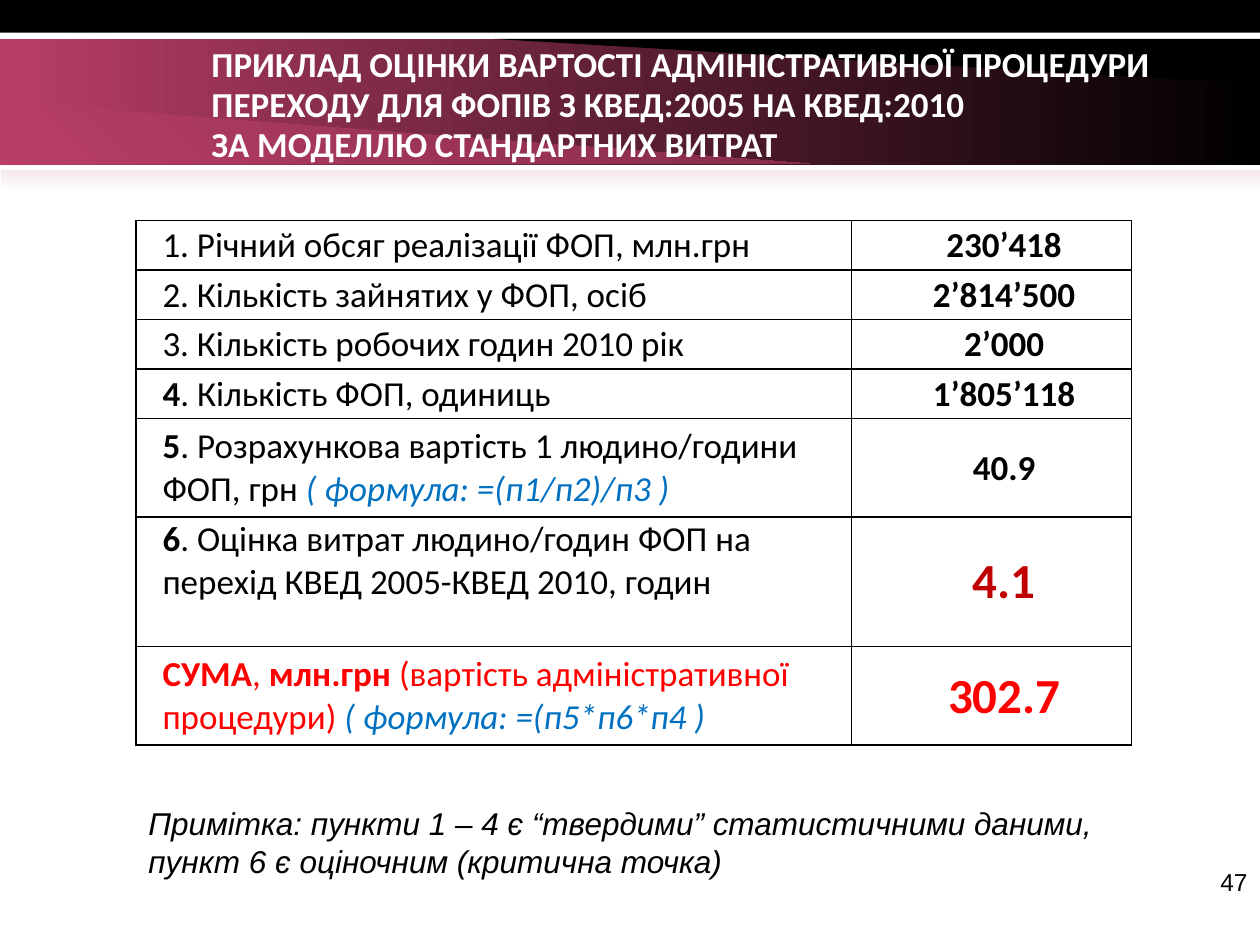
from dataclasses import dataclass

import pptx
import pptx.dml.color
import pptx.enum.shapes
import pptx.enum.text
import pptx.oxml
import pptx.oxml.ns
import pptx.util

COLS, ROWS = 100, 75
UNIT = pptx.util.Inches(0.1)
ALIGN = pptx.enum.text.PP_ALIGN
ANCHOR = pptx.enum.text.MSO_ANCHOR


@dataclass(frozen=True)
class Theme:
    heading_font: str = "Calibri"
    body_font: str = "Arial"
    black: str = "000000"
    white: str = "FFFFFF"
    rose: str = "B83D68"
    plum: str = "842C4A"
    blush: str = "F4E7ED"
    blue: str = "0070C0"
    dark_red: str = "C00000"
    red: str = "FF0000"
    text: int = 20
    value: int = 28
    note: int = 18
    number: int = 14
    title_spacing: int = 23


T = Theme()


@dataclass(frozen=True)
class Box:
    """A place on the grid, in columns and rows."""
    col: float
    row: float
    width: float
    height: float

    def emu(self) -> list[int]:
        return [grid(n) for n in (self.col, self.row, self.width, self.height)]


@dataclass(frozen=True)
class Run:
    text: str
    bold: bool = False
    italic: bool = False
    color: str = T.black


@dataclass(frozen=True)
class CostRow:
    label: list[Run]
    value: str
    height: float
    value_color: str = T.black
    value_size: int = T.text
    label_anchor: ANCHOR = ANCHOR.MIDDLE


def grid(n: float) -> int:
    return round(n * UNIT)


def rgb(color: str) -> pptx.dml.color.RGBColor:
    return pptx.dml.color.RGBColor.from_string(color)


def paint(sp, colors: list[str], angle: float = 0) -> None:
    """Fill with one colour, or with a gradient turned counter-clockwise."""
    sp.shadow.inherit = False
    sp.line.fill.background()
    if len(colors) == 1:
        sp.fill.solid()
        sp.fill.fore_color.rgb = rgb(colors[0])
        return
    sp.fill.gradient()
    sp.fill.gradient_angle = angle
    for stop, color in zip(sp.fill.gradient_stops, colors):
        stop.color.rgb = rgb(color)


def add_band(s, box: Box, colors: list[str], angle: float = 0) -> None:
    kind = pptx.enum.shapes.MSO_SHAPE.RECTANGLE
    paint(s.shapes.add_shape(kind, *box.emu()), colors, angle)


def add_facet(s, points: list[tuple[float, float]], colors: list[str], angle: float = 0) -> None:
    start, *rest = [(grid(x), grid(y)) for x, y in points]
    builder = s.shapes.build_freeform(*start)
    builder.add_line_segments(rest, close=True)
    paint(builder.convert_to_shape(), colors, angle)


def write(tf, paragraphs: list[list[Run]], *, font: str, size: int, align=ALIGN.LEFT,
          spacing: int | None = None, indent: float = 0) -> None:
    tf.word_wrap = True
    for i, runs in enumerate(paragraphs):
        p = tf.add_paragraph() if i else tf.paragraphs[0]
        p.alignment = align
        if spacing:
            p.line_spacing = pptx.util.Pt(spacing)
        if indent:
            p._p.get_or_add_pPr().set("marL", str(grid(indent)))
        for run in runs:
            r = p.add_run()
            r.text = run.text
            r.font.name, r.font.size = font, pptx.util.Pt(size)
            r.font.bold, r.font.italic = run.bold, run.italic
            r.font.color.rgb = rgb(run.color)


def add_text(s, box: Box, paragraphs: list[list[Run]], **fmt) -> None:
    write(s.shapes.add_textbox(*box.emu()).text_frame, paragraphs, **fmt)


def add_borders(cell) -> None:
    for side in "LRTB":
        cell._tc.get_or_add_tcPr().append(pptx.oxml.parse_xml(
            f'<a:ln{side} {pptx.oxml.ns.nsdecls("a")} w="12700"><a:solidFill>'
            f'<a:srgbClr val="{T.black}"/></a:solidFill></a:ln{side}>'))


def fill_cell(cell, runs: list[Run], anchor: ANCHOR, **fmt) -> None:
    add_borders(cell)
    cell.fill.background()
    cell.vertical_anchor = anchor
    cell.margin_left = cell.margin_right = cell.margin_top = grid(0.1)
    cell.margin_bottom = 0
    write(cell.text_frame, [runs], font=T.heading_font, indent=2, **fmt)


def add_cost_table(s, col: float, row: float, widths: list[float], rows: list[CostRow]) -> None:
    box = Box(col, row, sum(widths), sum(r.height for r in rows))
    table = s.shapes.add_table(len(rows), len(widths), *box.emu()).table
    table.first_row = table.horz_banding = False
    for column, width in zip(table.columns, widths):
        column.width = grid(width)
    for i, item in enumerate(rows):
        table.rows[i].height = grid(item.height)
        fill_cell(table.cell(i, 0), item.label, item.label_anchor, size=T.text)
        fill_cell(table.cell(i, 1), [Run(item.value, True, color=item.value_color)],
                  ANCHOR.MIDDLE, size=item.value_size, align=ALIGN.CENTER)


def formula(text: str) -> Run:
    return Run(text, italic=True, color=T.blue)


SINGLE, DOUBLE, TRIPLE = 3.93, 7.8, 10.3
COSTS = [
    CostRow([Run("1. Річний обсяг реалізації ФОП, млн.грн")], "230’418", SINGLE),
    CostRow([Run("2. Кількість зайнятих у ФОП, осіб")], "2’814’500", SINGLE),
    CostRow([Run("3. Кількість робочих годин 2010 рік")], "2’000", SINGLE),
    CostRow([Run("4", True), Run(". Кількість ФОП, одиниць")], "1’805’118", SINGLE),
    CostRow([Run("5", True), Run(". Розрахункова вартість 1 людино/години ФОП, грн "),
             formula("( формула: =(п1/п2)/п3 )")], "40.9", DOUBLE),
    CostRow([Run("6", True),
             Run(". Оцінка витрат людино/годин ФОП на перехід КВЕД 2005-КВЕД 2010, годин")],
            "4.1", TRIPLE, T.dark_red, T.value, ANCHOR.TOP),
    CostRow([Run("СУМА", True, color=T.red), Run(", ", color=T.red),
             Run("млн.грн", True, color=T.red),
             Run(" (вартість адміністративної процедури) ", color=T.red),
             formula("( формула: =(п5*п6*п4 )")], "302.7", DOUBLE, T.red, T.value),
]
TITLE = ["ПРИКЛАД ОЦІНКИ ВАРТОСТІ АДМІНІСТРАТИВНОЇ ПРОЦЕДУРИ ПЕРЕХОДУ "
         "ДЛЯ ФОПІВ З КВЕД:2005 НА КВЕД:2010",
         "ЗА МОДЕЛЛЮ СТАНДАРТНИХ ВИТРАТ"]
NOTE = ("Примітка: пункти 1 – 4 є “твердими” статистичними даними, "
        "пункт 6 є оціночним (критична точка)")


def main() -> None:
    prs = pptx.Presentation()
    prs.slide_width, prs.slide_height = grid(COLS), grid(ROWS)
    s = prs.slides.add_slide(prs.slide_layouts[6])

    add_band(s, Box(0, 3.1, COLS, 10), [T.rose, T.black])
    add_facet(s, [(98.2, 3.1), (39.3, 3.1), (COLS, 6.7), (COLS, 3.1)], [T.black])
    add_facet(s, [(1.9, 13), (64.3, 13), (0, 8.1), (0, 13)], [T.rose, T.plum], 45)
    add_band(s, Box(0, 0, COLS, 2.6), [T.black])
    add_band(s, Box(0.1, 13.5, 99.9, 1.7), [T.blush, T.white], 270)

    add_cost_table(s, 10.8, 17.5, [56.8, 22.2], COSTS)
    add_text(s, Box(15.8, 3, 79.2, 11.1), [[Run(line, True, color=T.white)] for line in TITLE],
             font=T.heading_font, size=T.text, spacing=T.title_spacing)
    add_text(s, Box(10.8, 63.3, 80, 7.1), [[Run(NOTE, italic=True)]],
             font=T.body_font, size=T.note)
    add_text(s, Box(76.7, 68.3, 23.3, 5.2), [[Run("47")]],
             font=T.body_font, size=T.number, align=ALIGN.RIGHT)
    prs.save("out.pptx")


if __name__ == "__main__":
    main()
